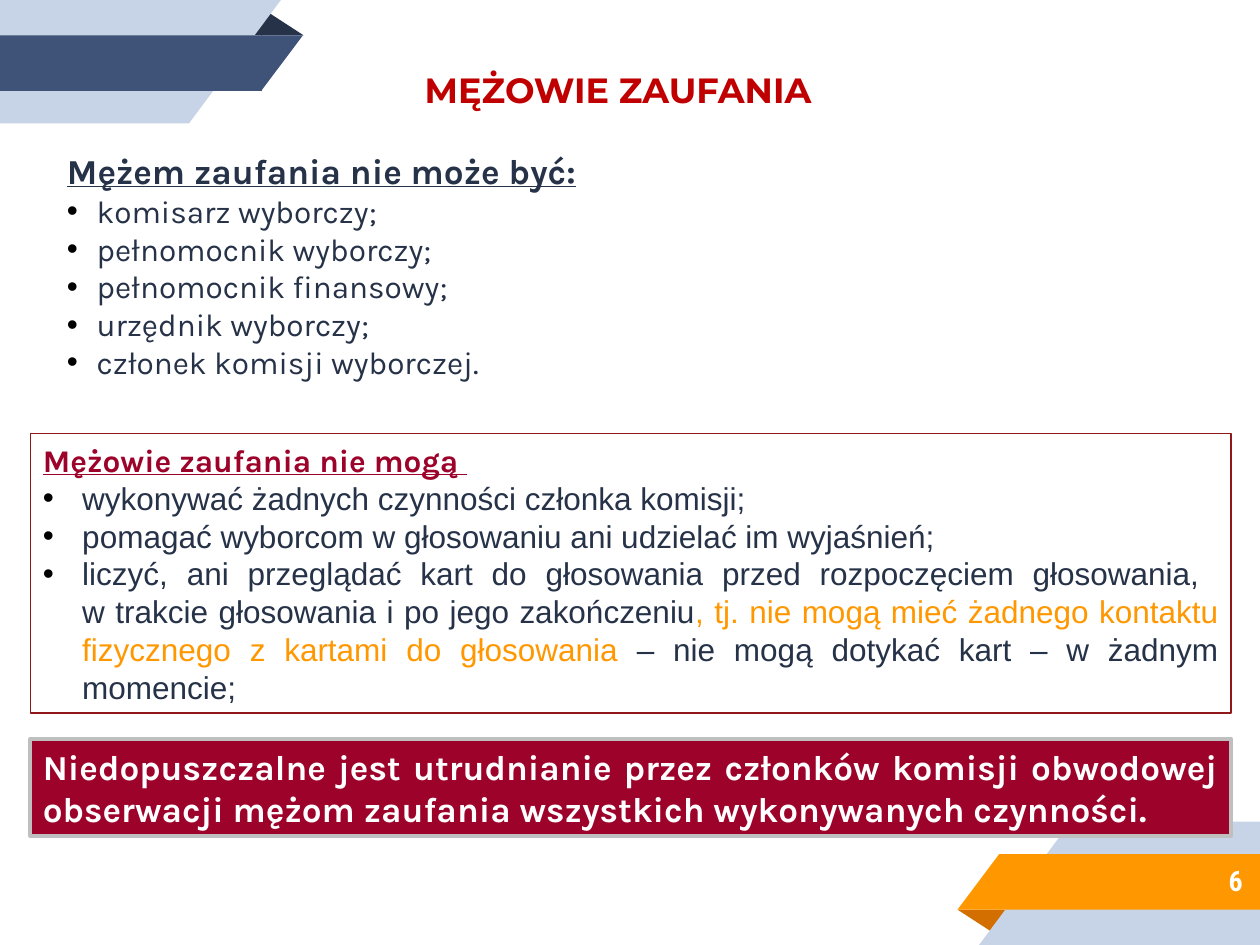
"""Build the slide on the rules for election observers."""
import pptx
import pptx.dml.color
import pptx.enum.shapes
import pptx.enum.text
import pptx.oxml.ns
import pptx.util
from lxml import etree

Pt = pptx.util.Pt
Align = pptx.enum.text.PP_ALIGN
Anchor = pptx.enum.text.MSO_ANCHOR
Preset = pptx.enum.shapes.MSO_SHAPE

COLORS = {
    "navy": "263248", "blue": "3F5378", "pale": "C7D3E6", "orange": "FF9800",
    "rust": "D26F00", "red": "C00000", "crimson": "9D032A", "frame": "90181B",
    "grey": "BFBFBF", "white": "FFFFFF", "black": "000000",
}


def add_run(paragraph, text, size, font, color, bold=False, underline=False):
    run = paragraph.add_run()
    run.text = text
    run.font.size = Pt(size)
    run.font.name = font
    run.font.bold = bold
    run.font.underline = underline
    run.font.color.rgb = pptx.dml.color.RGBColor.from_string(COLORS[color])


def format_paragraph(paragraph, line_height, alignment, indent=0):
    paragraph.alignment = alignment
    paragraph.line_spacing = Pt(line_height)
    paragraph.space_before = paragraph.space_after = Pt(0)
    properties = paragraph._p.get_or_add_pPr()
    properties.set("marL", str(Pt(indent)))
    properties.set("indent", str(-Pt(indent)))
    qn = pptx.oxml.ns.qn
    if indent:
        bullet_color = etree.SubElement(properties, qn("a:buClr"))
        etree.SubElement(bullet_color, qn("a:srgbClr"), val=COLORS["black"])
        etree.SubElement(properties, qn("a:buFont"), typeface="Arial")
        etree.SubElement(properties, qn("a:buChar"), char="•")
    else:
        etree.SubElement(properties, qn("a:buNone"))


presentation = pptx.Presentation()
presentation.slide_width = Pt(720)
presentation.slide_height = Pt(540)
slide = presentation.slides.add_slide(presentation.slide_layouts[1])

ribbon_parts = [
    (Preset.ISOSCELES_TRIANGLE, 142.5, 6.5, 31, 13.7, 0, False, "navy"),
    (Preset.RECTANGLE, 0, 0, 108, 70.5, 180, True, "pale"),
    (Preset.RIGHT_TRIANGLE, 108, 0, 52.5, 70.5, 180, True, "pale"),
    (Preset.RECTANGLE, 0, 20.2, 149.7, 31.7, 180, True, "blue"),
    (Preset.RIGHT_TRIANGLE, 149.3, 20.2, 23.8, 31.7, 180, True, "blue"),
    (Preset.ISOSCELES_TRIANGLE, 547.2, 519.8, 31, 13.7, 180, False, "rust"),
    (Preset.RECTANGLE, 612, 469.5, 108, 70.5, 0, True, "pale"),
    (Preset.RIGHT_TRIANGLE, 559.5, 469.5, 52.5, 70.5, 0, True, "pale"),
    (Preset.RECTANGLE, 570.8, 488.1, 149.2, 31.7, 0, True, "orange"),
    (Preset.RIGHT_TRIANGLE, 547.2, 488.1, 23.8, 31.7, 0, True, "orange"),
]
for preset, left, top, width, height, rotation, flipped, color in ribbon_parts:
    shape = slide.shapes.add_shape(preset, Pt(left), Pt(top), Pt(width), Pt(height))
    shape.shadow.inherit = False
    shape.fill.solid()
    shape.fill.fore_color.rgb = pptx.dml.color.RGBColor.from_string(COLORS[color])
    shape.line.fill.background()
    shape.rotation = rotation
    if flipped:
        shape._element.spPr.xfrm.set("flipH", "1")
    if preset == Preset.ISOSCELES_TRIANGLE:
        shape.adjustments[0] = 0.32

title = slide.shapes.title
title.left, title.top, title.width, title.height = Pt(235.5), Pt(35.3), Pt(357), Pt(31.7)
title.text_frame.auto_size = pptx.enum.text.MSO_AUTO_SIZE.NONE
title.text_frame.vertical_anchor = Anchor.TOP
paragraph = title.text_frame.paragraphs[0]
paragraph.alignment = Align.LEFT
add_run(paragraph, "MĘŻOWIE ZAUFANIA", 20, "Montserrat", "red", bold=True)

body = slide.placeholders[1]
body.left, body.top, body.width, body.height = Pt(31), Pt(81.4), Pt(396.7), Pt(140.4)
body.text_frame.auto_size = pptx.enum.text.MSO_AUTO_SIZE.NONE
body.text_frame.vertical_anchor = Anchor.MIDDLE
paragraph = body.text_frame.paragraphs[0]
format_paragraph(paragraph, 24, Align.JUSTIFY)
add_run(paragraph, "Mężem zaufania nie może być:", 20, "Karla", "navy", True, True)
for excluded in ["komisarz wyborczy;", "pełnomocnik wyborczy;", "pełnomocnik finansowy;",
                 "urzędnik wyborczy;", "członek komisji wyborczej."]:
    paragraph = body.text_frame.add_paragraph()
    format_paragraph(paragraph, 21.6, Align.JUSTIFY, 17)
    add_run(paragraph, excluded, 18, "Karla", "navy")

panels = []
for top, height, fill, line, line_width in [(247.7, 159.8, None, "frame", 0.75),
                                            (422.2, 55.4, "crimson", "grey", 2.25)]:
    panel = slide.shapes.add_shape(Preset.RECTANGLE, Pt(17.4), Pt(top), Pt(686), Pt(height))
    panel.shadow.inherit = False
    if fill:
        panel.fill.solid()
        panel.fill.fore_color.rgb = pptx.dml.color.RGBColor.from_string(COLORS[fill])
    else:
        panel.fill.background()
    panel.line.color.rgb = pptx.dml.color.RGBColor.from_string(COLORS[line])
    panel.line.width = Pt(line_width)
    panel.text_frame.word_wrap = True
    panel.text_frame.vertical_anchor = Anchor.MIDDLE
    panels.append(panel.text_frame)
prohibitions, warning = panels

paragraph = prohibitions.paragraphs[0]
format_paragraph(paragraph, 21.6, Align.LEFT)
add_run(paragraph, "Mężowie zaufania nie mogą ", 18, "Karla", "crimson", True, True)
for prohibited in ["wykonywać żadnych czynności członka komisji;",
                   "pomagać wyborcom w głosowaniu ani udzielać im wyjaśnień;"]:
    paragraph = prohibitions.add_paragraph()
    format_paragraph(paragraph, 21.6, Align.LEFT, 22.5)
    add_run(paragraph, prohibited, 18, "Arial", "navy")
paragraph = prohibitions.add_paragraph()
format_paragraph(paragraph, 21.6, Align.JUSTIFY, 22.5)
add_run(paragraph, "liczyć, ani przeglądać kart do głosowania przed rozpoczęciem głosowania, ",
        18, "Arial", "navy")
paragraph.add_line_break()
for text, color in [
    ("w trakcie głosowania i po jego zakończeniu", "navy"),
    (", tj. nie mogą mieć żadnego kontaktu fizycznego z kartami do głosowania", "orange"),
    (" – nie mogą dotykać kart – w żadnym momencie;", "navy"),
]:
    add_run(paragraph, text, 18, "Arial", color)

paragraph = warning.paragraphs[0]
format_paragraph(paragraph, 24, Align.JUSTIFY)
add_run(paragraph, "Niedopuszczalne jest utrudnianie przez członków komisji obwodowej "
        "obserwacji mężom zaufania wszystkich wykonywanych czynności.",
        20, "Karla", "white", bold=True)

page_number = slide.shapes.add_textbox(Pt(599.8), Pt(486.7), Pt(117.4), Pt(33.1)).text_frame
page_number.word_wrap = True
page_number.vertical_anchor = Anchor.MIDDLE
page_number.paragraphs[0].alignment = Align.RIGHT
add_run(page_number.paragraphs[0], "6", 16, "Roboto Condensed", "white", bold=True)

presentation.save("out.pptx")
